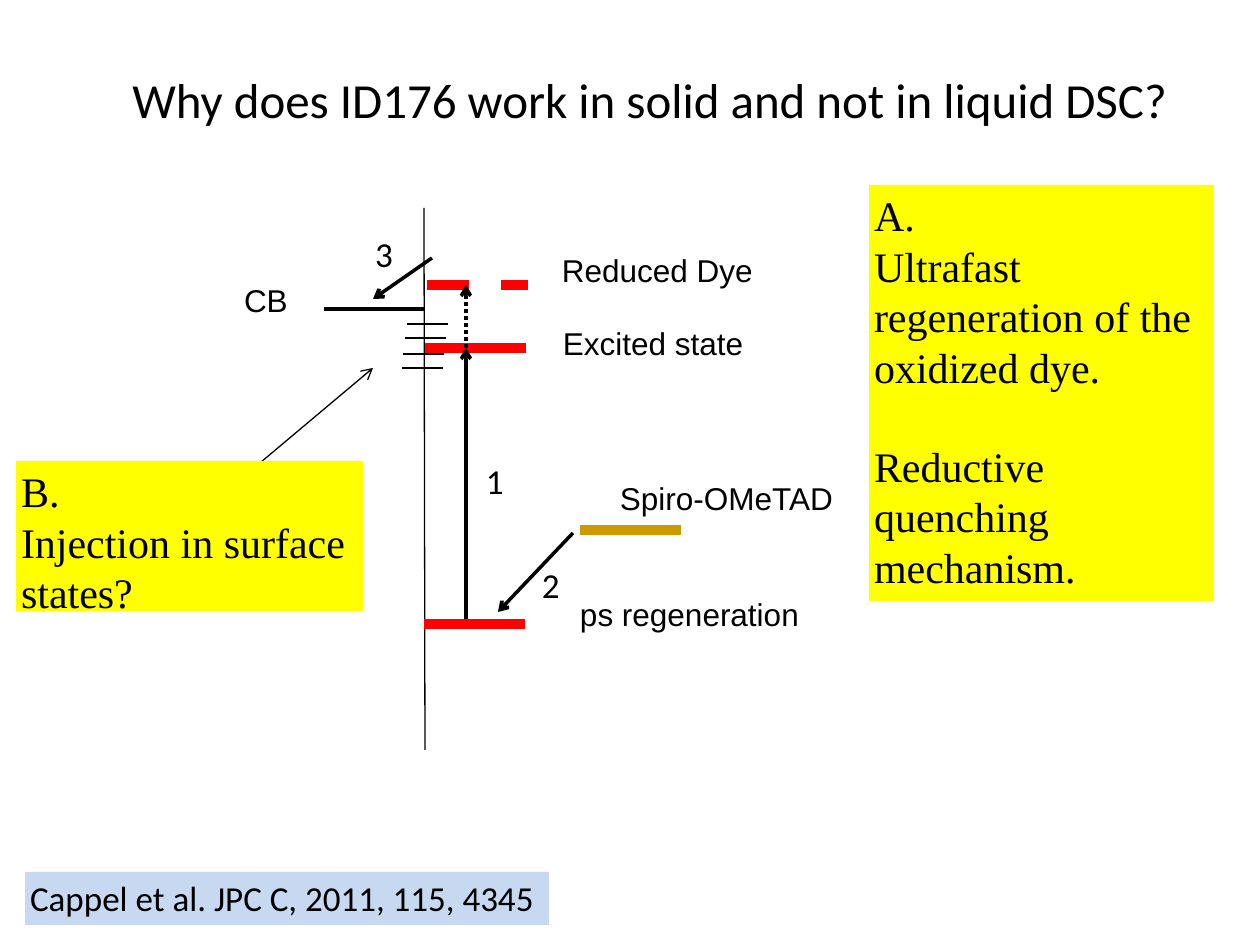
"""Build the slide on the energy levels of dye ID176 in solar cells."""
import pptx
import pptx.util
import pptx.dml.color
import pptx.enum.dml
import pptx.enum.shapes
import pptx.enum.text
import pptx.oxml
import pptx.oxml.ns

PX = 914400 // 126
HUE = {"ink": "000000", "dye": "FF0000", "spiro": "CC9900",
       "note": "FFFF00", "cite": "C6D9F0"}
DASH = pptx.enum.dml.MSO_LINE
FIT = pptx.enum.text.MSO_AUTO_SIZE
NS = pptx.oxml.ns.nsdecls("a")


def draw(ends, hue, width, dash=None, head=False):
    link = slide.shapes.add_connector(
        pptx.enum.shapes.MSO_CONNECTOR.STRAIGHT, *[n * PX for n in ends])
    link.line.color.rgb = pptx.dml.color.RGBColor.from_string(HUE[hue])
    link.line.width = pptx.util.Pt(width)
    if dash:
        link.line.dash_style = dash
    if head:
        link.line._get_or_add_ln().append(
            pptx.oxml.parse_xml(f'<a:tailEnd {NS} type="arrow"/>'))
    link._element.spPr.append(pptx.oxml.parse_xml(f"<a:effectLst {NS}/>"))


def style(frame, font, size):
    frame.margin_left = frame.margin_right = 5 * PX
    frame.margin_top = frame.margin_bottom = 5 * PX
    for para in frame.paragraphs:
        para.font.name = font
        para.font.size = pptx.util.Pt(size)
        para.font.color.rgb = pptx.dml.color.RGBColor.from_string(HUE["ink"])


deck = pptx.Presentation()
deck.slide_width = 1260 * PX
deck.slide_height = 945 * PX
slide = deck.slides.add_slide(deck.slide_layouts[5])

title = slide.shapes.title
title.left, title.top, title.width, title.height = [
    n * PX for n in (39, -5, 1221, 208)]
title.text_frame.text = "Why does ID176 work in solid and not in liquid DSC?"
title.text_frame.vertical_anchor = pptx.enum.text.MSO_ANCHOR.MIDDLE
title.text_frame.paragraphs[0].alignment = pptx.enum.text.PP_ALIGN.CENTER
style(title.text_frame, "Calibri", 28)

draw((324, 309, 425, 309), "ink", 2.25)
draw((424, 208, 425, 750), "ink", 0.75)

levels = [(424, 624, "dye", None), (580, 530, "spiro", None),
          (425, 348, "dye", None), (427, 285, "dye", DASH.DASH)]
for left, top, hue, dash in levels:
    draw((left, top, left + 101, top), hue, 6, dash)

moves = [((466, 619, 466, 348), None), ((573, 533, 498, 612), None),
         ((466, 348, 466, 285), DASH.ROUND_DOT), ((432, 258, 373, 299), None)]
for ends, dash in moves:
    draw(ends, "ink", 2, dash, True)

for left, top in [(407, 324), (405, 338), (403, 354), (402, 368)]:
    draw((left, top, left + 41, top), "ink", 1)
draw((204, 510, 373, 368), "ink", 0.75, head=True)

labels = [
    ("Spiro-OMeTAD", 615, 474, 226, 45, "Arial", 18),
    ("ps regeneration", 575, 590, 232, 45, "Arial", 18),
    ("CB", 239, 276, 55, 45, "Arial", 18),
    ("Reduced Dye", 557, 246, 203, 45, "Arial", 18),
    ("Excited state", 558, 319, 193, 45, "Arial", 18),
    ("1", 481, 455, 30, 53, "Calibri", 20),
    ("2", 537, 559, 30, 53, "Calibri", 20),
    ("3", 370, 228, 30, 53, "Calibri", 20),
    ("Cappel et al. JPC C, 2011, 115, 4345", 25, 872, 524, 53, "Calibri", 20),
]
for text, left, top, width, height, font, size in labels:
    box = slide.shapes.add_textbox(left * PX, top * PX, width * PX, height * PX)
    box.text_frame.text = text
    box.text_frame.word_wrap = False
    box.text_frame.auto_size = FIT.SHAPE_TO_FIT_TEXT
    style(box.text_frame, font, size)
    if text.startswith("Cappel"):
        box.fill.solid()
        box.fill.fore_color.rgb = pptx.dml.color.RGBColor.from_string(HUE["cite"])

notes = [
    ((16, 461, 347, 150), ["B.", "Injection in surface states?"]),
    ((869, 185, 345, 416), ["A.", "Ultrafast regeneration of the oxidized dye.",
                            "Reductive quenching mechanism."]),
]
for place, lines in notes:
    box = slide.shapes.add_textbox(*[n * PX for n in place])
    box.fill.solid()
    box.fill.fore_color.rgb = pptx.dml.color.RGBColor.from_string(HUE["note"])
    frame = box.text_frame
    frame.text = "\n".join(lines)
    frame.word_wrap = True
    frame.auto_size = FIT.NONE
    style(frame, "Times New Roman", 24)
    for para in frame.paragraphs[2:]:
        para.space_before = pptx.util.Pt(28)

deck.save("out.pptx")
